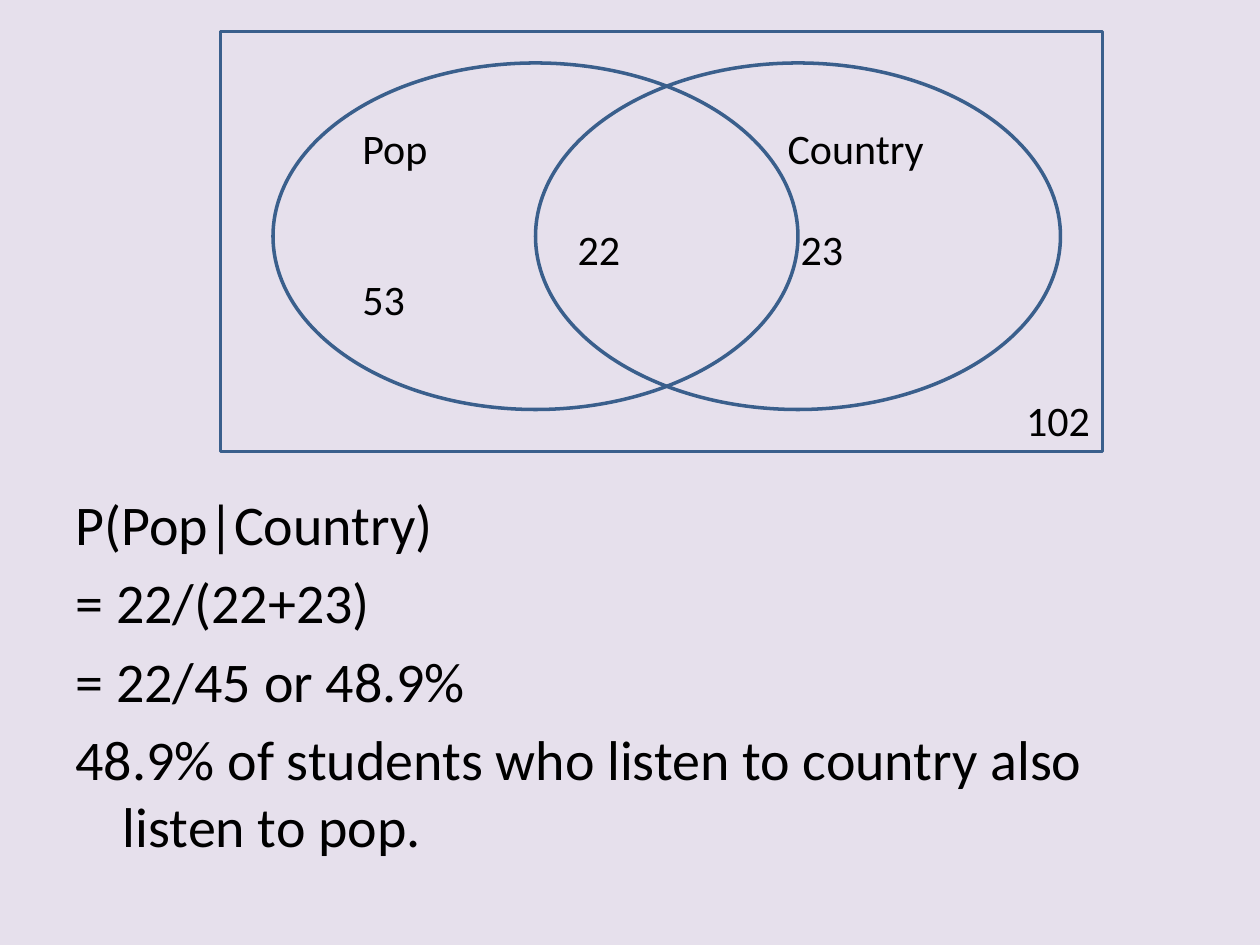
from pptx import Presentation
from pptx.dml.color import RGBColor
from pptx.enum.shapes import MSO_SHAPE as Shape
from pptx.enum.text import MSO_ANCHOR as Anchor, PP_ALIGN as Align
from pptx.oxml.ns import qn
from pptx.util import Pt

BACK = RGBColor(0xE6, 0xE0, 0xEC)
EDGE = RGBColor(0x3A, 0x5F, 0x8C)
INK = RGBColor(0, 0, 0)
FONT = "Calibri"

# Text, left and middle height, measured from the frame's corner
LABELS = [
    ("Pop", 81, 66.5),
    ("Country", 324, 66.5),
    ("22", 204, 124),
    ("23", 331.5, 124),
    ("53", 81, 153),
]
STEPS = [
    "P(Pop|Country)",
    "= 22/(22+23)",
    "= 22/45 or 48.9%",
    "48.9% of students who listen to country also listen to pop.",
]


def add_run(para, text, size):
    run = para.add_run()
    run.text = text
    run.font.name = FONT
    run.font.size = Pt(size)
    run.font.color.rgb = INK


def add_outline(slide, kind, x, y, w, h):
    shape = slide.shapes.add_shape(kind, Pt(x), Pt(y), Pt(w), Pt(h))
    shape.shadow.inherit = False
    shape.fill.background()
    shape.line.color.rgb = EDGE
    shape.line.width = Pt(2)
    return shape


def add_label(slide, text, x, mid):
    w, h = 96, 30
    box = slide.shapes.add_textbox(Pt(x), Pt(mid - h / 2), Pt(w), Pt(h))
    frame = box.text_frame
    frame.word_wrap = True
    frame.vertical_anchor = Anchor.MIDDLE
    frame.margin_left = frame.margin_right = 0
    frame.margin_top = frame.margin_bottom = 0
    add_run(frame.paragraphs[0], text, 24)


def add_venn(slide, x, y, w, h):
    """Frame with the total, two overlapping sets and their counts."""
    frame = add_outline(slide, Shape.RECTANGLE, x, y, w, h)
    frame.text_frame.vertical_anchor = Anchor.BOTTOM
    para = frame.text_frame.paragraphs[0]
    para.alignment = Align.RIGHT
    add_run(para, "102", 24)

    side, top, wide, high = 30, 18, 300, 198
    for left in (side, w - side - wide + 6):
        add_outline(slide, Shape.OVAL, x + left, y + top, wide, high)
    for text, left, mid in LABELS:
        add_label(slide, text, x + left, y + mid)


def add_steps(slide, x, y, w, h):
    body = slide.placeholders[1]
    body.left, body.top, body.width, body.height = Pt(x), Pt(y), Pt(w), Pt(h)
    frame = body.text_frame
    for i, text in enumerate(STEPS):
        para = frame.add_paragraph() if i else frame.paragraphs[0]
        props = para._p.get_or_add_pPr()
        props.set("marL", str(Pt(27)))
        props.set("indent", str(Pt(-27)))
        props.append(props.makeelement(qn("a:buNone"), {}))
        add_run(para, text, 32)


def main():
    deck = Presentation()
    deck.slide_width, deck.slide_height = Pt(720), Pt(540)
    slide = deck.slides.add_slide(deck.slide_layouts[1])
    title = slide.shapes.title.element
    title.getparent().remove(title)
    slide.background.fill.solid()
    slide.background.fill.fore_color.rgb = BACK
    add_steps(slide, 36, 276, 648, 206.5)
    add_venn(slide, 126, 18, 504, 240)
    deck.save("out.pptx")


if __name__ == "__main__":
    main()
